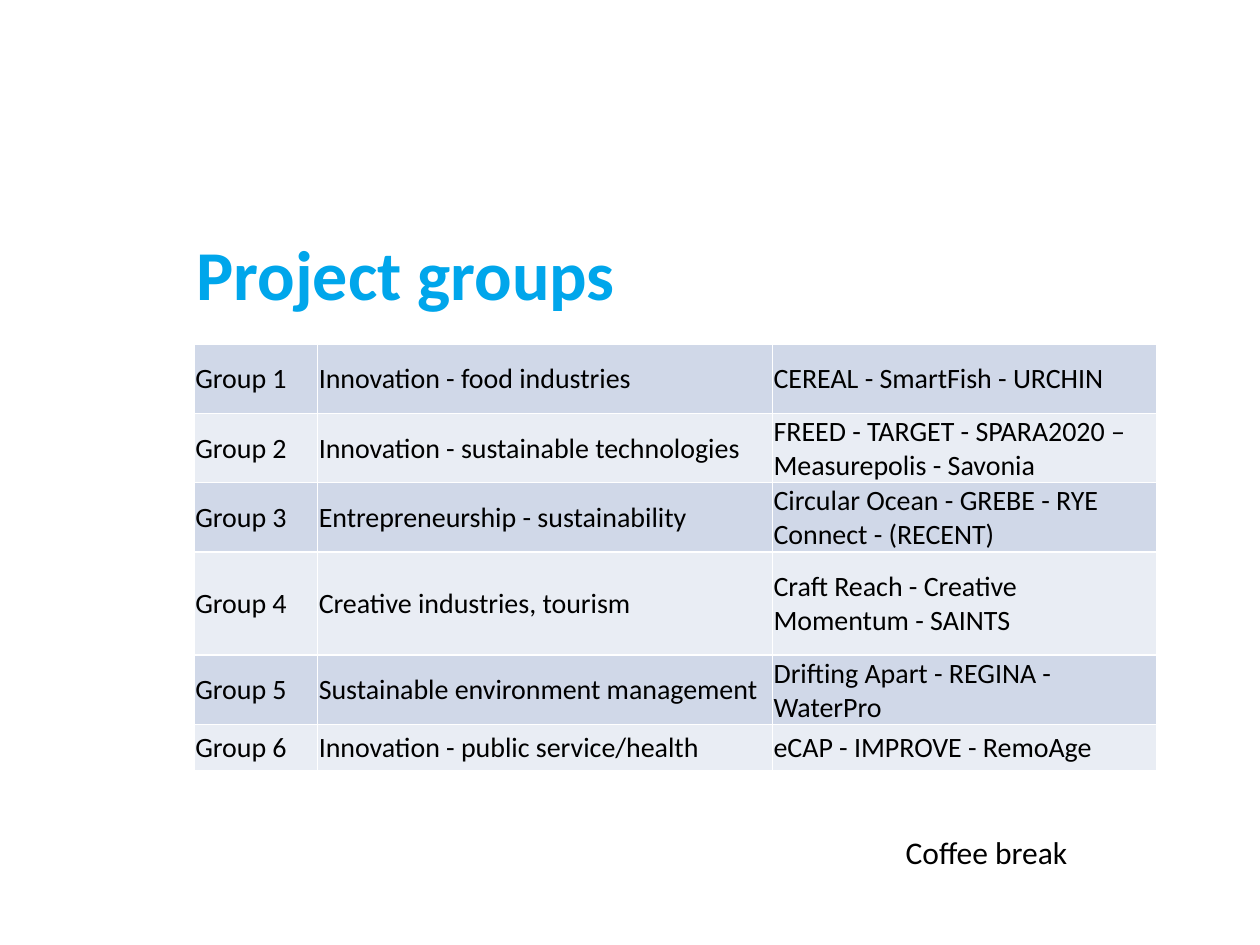
from lxml import etree
from pptx import Presentation
from pptx.dml.color import RGBColor
from pptx.enum.text import MSO_ANCHOR as Anchor
from pptx.oxml.ns import qn
from pptx.util import Inches, Pt

BLUE = RGBColor(0x00, 0xA6, 0xEB)
BLACK = RGBColor(0x00, 0x00, 0x00)
WHITE = RGBColor(0xFF, 0xFF, 0xFF)
BANDS = (RGBColor(0xD0, 0xD8, 0xE8), RGBColor(0xE9, 0xED, 0xF4))
FONT = "Calibri"

COLUMN_WIDTHS = (0.98, 3.61, 3.05)
ROW_HEIGHTS = (0.55, 0.55, 0.55, 0.82, 0.55, 0.37)
GROUPS = (
    ("Innovation - food industries", "CEREAL - SmartFish - URCHIN"),
    ("Innovation - sustainable technologies",
     "FREED - TARGET - SPARA2020 – Measurepolis - Savonia"),
    ("Entrepreneurship - sustainability",
     "Circular Ocean - GREBE - RYE Connect - (RECENT)"),
    ("Creative industries, tourism", "Craft Reach - Creative Momentum - SAINTS"),
    ("Sustainable environment management", "Drifting Apart - REGINA - WaterPro"),
    ("Innovation - public service/health", "eCAP - IMPROVE - RemoAge"),
)


def write(frame, text, size, color=BLACK, bold=False):
    frame.text = text
    font = frame.paragraphs[0].runs[0].font
    font.name, font.size, font.bold = FONT, Pt(size), bold
    font.color.rgb = color


def add_label(page, area, text, size, wrap=True, **style):
    box = page.shapes.add_textbox(*map(Inches, area))
    box.text_frame.word_wrap = wrap
    box.text_frame.vertical_anchor = Anchor.MIDDLE
    write(box.text_frame, text, size, **style)


def add_borders(cell, color, width):
    properties = cell._tc.get_or_add_tcPr()
    for side in ("a:lnL", "a:lnR", "a:lnT", "a:lnB"):
        line = etree.SubElement(properties, qn(side), w=str(Pt(width)))
        fill = etree.SubElement(line, qn("a:solidFill"))
        etree.SubElement(fill, qn("a:srgbClr"), val=str(color))


def fill_cell(cell, text, band):
    write(cell.text_frame, text, 16)
    cell.vertical_anchor = Anchor.MIDDLE
    cell.margin_left = cell.margin_right = cell.margin_top = Inches(0.01)
    cell.margin_bottom = 0
    add_borders(cell, WHITE, 1)
    cell.fill.solid()
    cell.fill.fore_color.rgb = band


def add_group_table(page, left, top):
    table = page.shapes.add_table(
        len(GROUPS), len(COLUMN_WIDTHS), Inches(left), Inches(top),
        Inches(sum(COLUMN_WIDTHS)), Inches(sum(ROW_HEIGHTS))).table
    table.first_row = False
    for column, width in zip(table.columns, COLUMN_WIDTHS):
        column.width = Inches(width)
    for index, (row, height, group) in enumerate(zip(table.rows, ROW_HEIGHTS, GROUPS)):
        row.height = Inches(height)
        for cell, text in zip(row.cells, (f"Group {index + 1}", *group)):
            fill_cell(cell, text, BANDS[index % 2])


def main():
    deck = Presentation()
    deck.slide_width, deck.slide_height = Inches(10), Inches(7.5)
    page = deck.slides.add_slide(deck.slide_layouts[6])

    # Heading, group table and closing note
    add_label(page, (1.46, 1.75, 7.09, 0.82), "Project groups", 40,
              color=BLUE, bold=True)
    add_group_table(page, 1.54, 2.73)
    add_label(page, (7.09, 6.56, 1.5, 0.4), "Coffee break", 18, wrap=False)
    deck.save("out.pptx")


if __name__ == "__main__":
    main()
